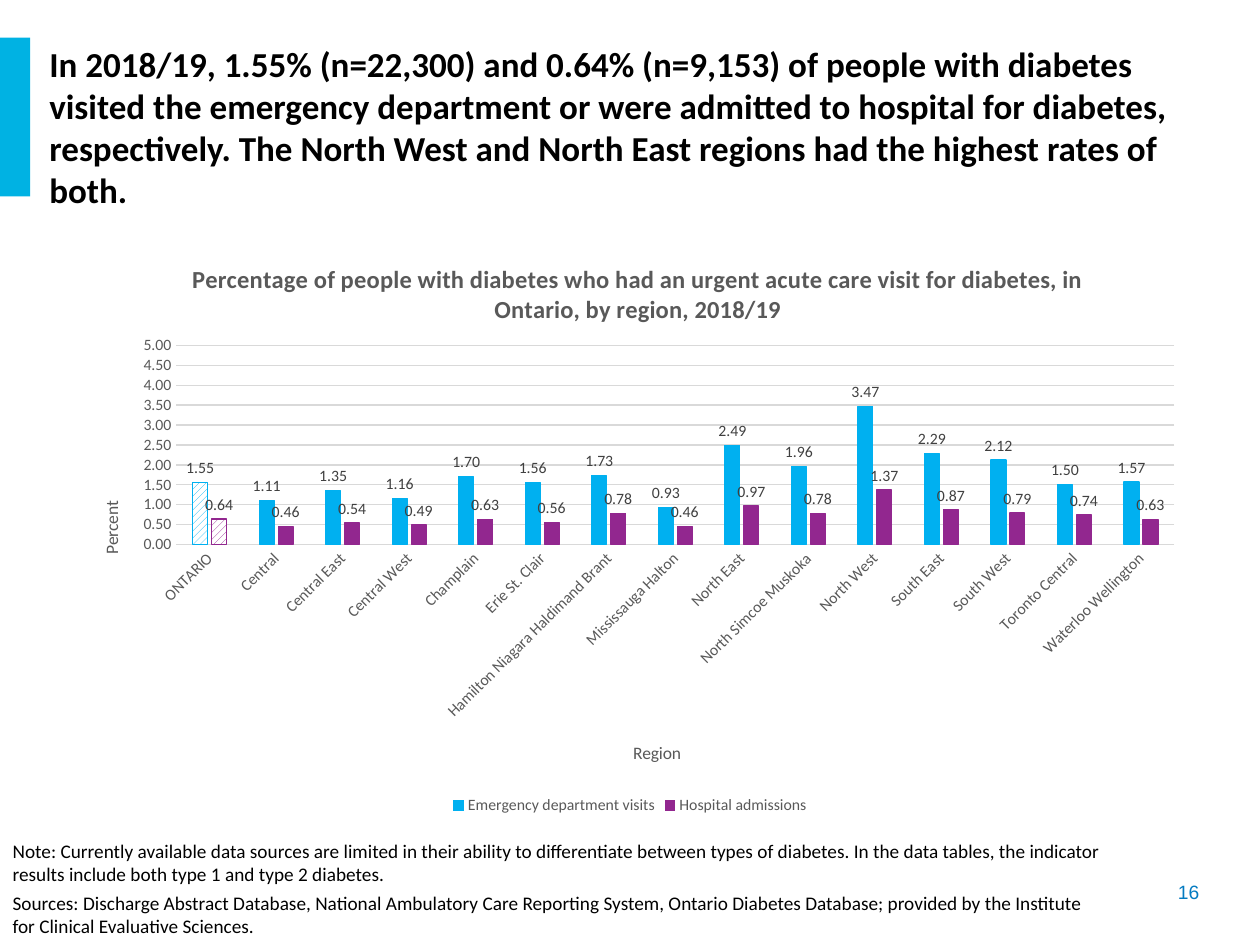
"""Builds a slide on urgent acute care visits for diabetes by Ontario region."""
from lxml import etree
from pptx import Presentation
from pptx.chart.data import CategoryChartData
from pptx.dml.color import RGBColor
from pptx.enum.chart import XL_CHART_TYPE, XL_LABEL_POSITION, XL_LEGEND_POSITION, XL_TICK_MARK
from pptx.enum.dml import MSO_PATTERN
from pptx.enum.shapes import MSO_SHAPE
from pptx.enum.text import MSO_ANCHOR, MSO_AUTO_SIZE, PP_ALIGN
from pptx.oxml.ns import qn
from pptx.util import Cm, Pt

COLUMNS = XL_CHART_TYPE.COLUMN_CLUSTERED
OUTSIDE = XL_LABEL_POSITION.OUTSIDE_END
BOTTOM = XL_LEGEND_POSITION.BOTTOM
NO_TICK = XL_TICK_MARK.NONE
STRIPES = MSO_PATTERN.WIDE_UPWARD_DIAGONAL
RECTANGLE = MSO_SHAPE.RECTANGLE
TOP, MIDDLE = MSO_ANCHOR.TOP, MSO_ANCHOR.MIDDLE
FIXED = MSO_AUTO_SIZE.NONE
LEFT, RIGHT = PP_ALIGN.LEFT, PP_ALIGN.RIGHT

COLORS = {
    "accent": "00B2E3", "visits": "00B0F0", "admissions": "92278F",
    "text": "000000", "white": "FFFFFF", "number": "047BC1",
    "axis": "595959", "label": "404040", "grid": "D9D9D9",
}
REGIONS = [
    "ONTARIO", "Central", "Central East", "Central West", "Champlain",
    "Erie St. Clair", "Hamilton Niagara Haldimand Brant", "Mississauga Halton",
    "North East", "North Simcoe Muskoka", "North West", "South East",
    "South West", "Toronto Central", "Waterloo Wellington",
]
RATES = {
    "Emergency department visits": [1.55, 1.11, 1.35, 1.16, 1.70, 1.56, 1.73, 0.93,
                                    2.49, 1.96, 3.47, 2.29, 2.12, 1.50, 1.57],
    "Hospital admissions": [0.64, 0.46, 0.54, 0.49, 0.63, 0.56, 0.78, 0.46,
                            0.97, 0.78, 1.37, 0.87, 0.79, 0.74, 0.63],
}
HEADLINE = (
    "In 2018/19, 1.55% (n=22,300) and 0.64% (n=9,153) of people with diabetes visited "
    "the emergency department or were admitted to hospital for diabetes, respectively. "
    "The North West and North East regions had the highest rates of both."
)
NOTES = [
    "Note: Currently available data sources are limited in their ability to differentiate "
    "between types of diabetes. In the data tables, the indicator results include both "
    "type 1 and type 2 diabetes.",
    "Sources: Discharge Abstract Database, National Ambulatory Care Reporting System, "
    "Ontario Diabetes Database; provided by the Institute for Clinical Evaluative Sciences.",
]
CHART_TITLE = (
    "Percentage of people with diabetes who had an urgent acute care visit for diabetes, "
    "in Ontario, by region, 2018/19"
)


def style_font(font, size, color, bold=False, name="Calibri"):
    for key, value in {"size": Pt(size), "bold": bold, "name": name}.items():
        setattr(font, key, value)
    font.color.rgb = RGBColor.from_string(COLORS[color])


def place(element, index, **fractions):
    for old in element.findall(qn("c:layout")):
        element.remove(old)
    layout = etree.Element(qn("c:layout"))
    element.insert(index, layout)
    manual = etree.SubElement(layout, qn("c:manualLayout"))
    if "w" in fractions:
        etree.SubElement(manual, qn("c:layoutTarget"), val="inner")
    for mode in ("xMode", "yMode"):
        etree.SubElement(manual, qn(f"c:{mode}"), val="edge")
    for key, value in fractions.items():
        etree.SubElement(manual, qn(f"c:{key}"), val=str(value))


deck = Presentation()
deck.slide_width, deck.slide_height = Cm(25.4), Cm(19.05)
page = deck.slides.add_slide(deck.slide_layouts[1])

bar = page.shapes.add_shape(RECTANGLE, Cm(0), Cm(0.76), Cm(0.61), Cm(3.2))
bar.shadow.inherit = False
bar.fill.solid()
bar.fill.fore_color.rgb = RGBColor.from_string(COLORS["accent"])
bar.line.fill.background()

number = page.shapes.add_textbox(Cm(21.46), Cm(17.6), Cm(2.97), Cm(0.74))
texts = [
    (page.shapes.title, (0.74, 0.71, 24.43, 3.68), [HEADLINE], MIDDLE, LEFT, 0,
     {"size": 20, "color": "text", "bold": True}),
    (page.placeholders[1], (0, 16.79, 22.6, 2.26), NOTES, TOP, LEFT, 3.3,
     {"size": 11, "color": "text"}),
    (number, (21.46, 17.6, 2.97, 0.74), ["16"], MIDDLE, RIGHT, 0,
     {"size": 11, "color": "number", "name": "Arial"}),
]
for box, bounds, lines, anchor, align, gap, style in texts:
    for key, value in zip(("left", "top", "width", "height"), bounds):
        setattr(box, key, Cm(value))
    frame = box.text_frame
    frame.text = "\n".join(lines)
    for key, value in {"word_wrap": True, "auto_size": FIXED, "vertical_anchor": anchor}.items():
        setattr(frame, key, value)
    for para in frame.paragraphs:
        para.alignment, para.space_before = align, Pt(gap)
        properties = para._p.get_or_add_pPr()
        properties.set("marL", "0")
        properties.set("indent", "0")
        etree.SubElement(properties, qn("a:buNone"))
        for span in para.runs:
            style_font(span.font, **style)

data = CategoryChartData(number_format="0.00")
data.categories = REGIONS
for name, values in RATES.items():
    data.add_series(name, values)
chart = page.shapes.add_chart(COLUMNS, Cm(1.27), Cm(4.72), Cm(22.86), Cm(11.81), data).chart
style_font(chart.font, 10, "text")
plot = chart.plots[0]
for key, value in {"gap_width": 219, "overlap": -27, "vary_by_categories": False}.items():
    setattr(plot, key, value)

for series, color in zip(plot.series, ("visits", "admissions")):
    shade = RGBColor.from_string(COLORS[color])
    series.invert_if_negative = False
    total = series.points[0]
    for part in (series, total):
        part.format.line.color.rgb = shade
        part.format.line.width = Pt(0.75)
    series.format.fill.solid()
    series.format.fill.fore_color.rgb = shade
    fill = total.format.fill
    fill.patterned()
    fill.pattern = STRIPES
    fill.fore_color.rgb = shade
    fill.back_color.rgb = RGBColor.from_string(COLORS["white"])
    labels = series.data_labels
    for key, value in {"show_value": True, "position": OUTSIDE, "number_format": "####0.00",
                       "number_format_is_linked": False}.items():
        setattr(labels, key, value)
    style_font(labels.font, 9, "label")

regions, percent = chart.category_axis, chart.value_axis
for axis in (regions, percent):
    axis.major_tick_mark = axis.minor_tick_mark = NO_TICK
    style_font(axis.tick_labels.font, 9, "axis")
for key, value in {"minimum_scale": 0, "maximum_scale": 5, "major_unit": 0.5}.items():
    setattr(percent, key, value)
percent.tick_labels.number_format = "#,##0.00"
percent.tick_labels.number_format_is_linked = False
percent.format.line.fill.background()
for line in (regions.format.line, percent.major_gridlines.format.line):
    line.color.rgb = RGBColor.from_string(COLORS["grid"])
    line.width = Pt(0.75)
regions._element.find(qn("c:txPr")).find(qn("a:bodyPr")).set("rot", "-2700000")

titles = [
    (chart, CHART_TITLE, 14, True, 0, 0.11, 0.04),
    (regions, "Region", 10, False, 0, 0.5, 0.86),
    (percent, "Percent", 10, False, -5400000, 0.03, 0.45),
]
for owner, words, size, bold, turn, x, y in titles:
    title = owner.chart_title if owner is chart else owner.axis_title
    title.text_frame.text = words
    style_font(title.text_frame.paragraphs[0].runs[0].font, size, "axis", bold)
    title.text_frame._txBody.find(qn("a:bodyPr")).set("rot", str(turn))
    place(title._element, 1, x=x, y=y)
place(chart._chartSpace.chart.plotArea, 0, x=0.1, y=0.19, w=0.88, h=0.34)

chart.has_legend = True
chart.legend.position = BOTTOM
chart.legend.include_in_layout = False
style_font(chart.legend.font, 9, "axis")

deck.save("out.pptx")
